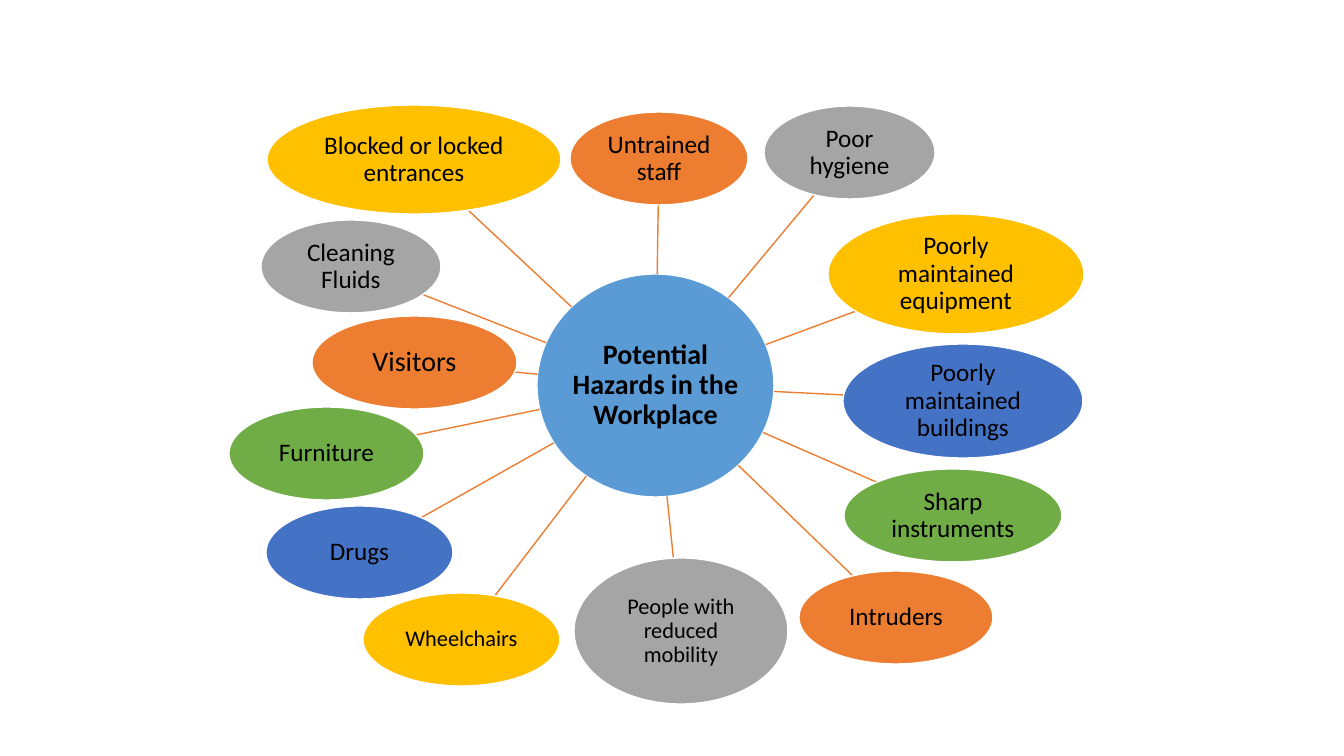
import math
from itertools import cycle

from lxml import etree
from pptx import Presentation
from pptx import util as u
from pptx.dml.color import RGBColor
from pptx.enum import shapes, text
from pptx.oxml.ns import qn

EMU_PER_PX = 914400 / 100.8
SLIDE_SIZE = (1344, 756)
BLACK, WHITE, HUB_BLUE, SPOKE_ORANGE = "000000", "FFFFFF", "5B9BD5", "ED7D31"
HAZARD_COLOURS = ("ED7D31", "A5A5A5", "FFC000", "4472C4", "70AD47")
HUB_BOX = (537, 274, 237, 223)

# Clockwise from the top: label, (left, top, width, height), font size
HAZARDS = [
    ("Untrained staff", (570, 112, 178, 93), 18),
    ("Poor hygiene", (764, 106, 171, 93), 18),
    ("Poorly maintained equipment", (828, 214, 256, 120), 18),
    ("Poorly maintained buildings", (843, 344, 240, 114), 18),
    ("Sharp instruments", (844, 469, 218, 93), 18),
    ("Intruders", (799, 571, 194, 93), 18),
    ("People with reduced mobility", (574, 558, 214, 146), 16),
    ("Wheelchairs", (363, 593, 197, 93), 16),
    ("Drugs", (266, 506, 187, 93), 18),
    ("Furniture", (229, 407, 195, 93), 18),
    ("Visitors", (312, 316, 205, 93), 20),
    ("Cleaning Fluids", (261, 220, 180, 93), 18),
    ("Blocked or locked entrances", (267, 105, 294, 109), 18),
]


def px(length):
    return u.Emu(round(length * EMU_PER_PX))


def colour(hex_string):
    return RGBColor.from_string(hex_string)


def centre(box):
    left, top, width, height = box
    return left + width / 2, top + height / 2


def edge_towards(box, target):
    """Return where the line from the ellipse's centre to target leaves it."""
    x, y = centre(box)
    dx, dy = target[0] - x, target[1] - y
    reach = math.hypot(dx / (box[2] / 2), dy / (box[3] / 2))
    return x + dx / reach, y + dy / reach


class Diagram:
    """Holds the shared style and the slide being drawn on."""

    font = "Calibri"
    line_width = u.Pt(1)

    def __init__(self, slide):
        self.slide = slide

    def bubble(self, label, box, fill, size, bold=False):
        shape = self.slide.shapes.add_shape(
            shapes.MSO_SHAPE.OVAL, *(px(length) for length in box))
        shape.shadow.inherit = False
        shape.fill.solid()
        shape.fill.fore_color.rgb = colour(fill)
        shape.line.color.rgb = colour(WHITE)
        shape.line.width = self.line_width

        frame = shape.text_frame
        frame.word_wrap = True
        frame.vertical_anchor = text.MSO_ANCHOR.MIDDLE
        frame.margin_left = frame.margin_right = px(1)
        frame.margin_top = frame.margin_bottom = px(1)

        paragraph = frame.paragraphs[0]
        paragraph.text = label
        paragraph.alignment = text.PP_ALIGN.CENTER
        paragraph.line_spacing = 0.9
        paragraph.font.name = self.font
        paragraph.font.size = u.Pt(size)
        paragraph.font.bold = bold
        paragraph.font.color.rgb = colour(BLACK)

    def spoke(self, start_box, end_box):
        """Draw a line between the facing edges of two ellipses."""
        start = edge_towards(start_box, centre(end_box))
        end = edge_towards(end_box, centre(start_box))
        connector = self.slide.shapes.add_connector(
            shapes.MSO_CONNECTOR.STRAIGHT,
            *(px(length) for length in start + end))
        connector.line.color.rgb = colour(SPOKE_ORANGE)
        connector.line.width = self.line_width
        etree.SubElement(connector._element.spPr, qn("a:effectLst"))


def main():
    presentation = Presentation()
    presentation.slide_width, presentation.slide_height = map(px, SLIDE_SIZE)
    slide = presentation.slides.add_slide(presentation.slide_layouts[6])

    diagram = Diagram(slide)
    diagram.bubble("Potential Hazards in the Workplace", HUB_BOX, HUB_BLUE,
                   20, bold=True)
    for (label, box, size), fill in zip(HAZARDS, cycle(HAZARD_COLOURS)):
        diagram.spoke(HUB_BOX, box)
        diagram.bubble(label, box, fill, size)

    presentation.save("out.pptx")


if __name__ == "__main__":
    main()
